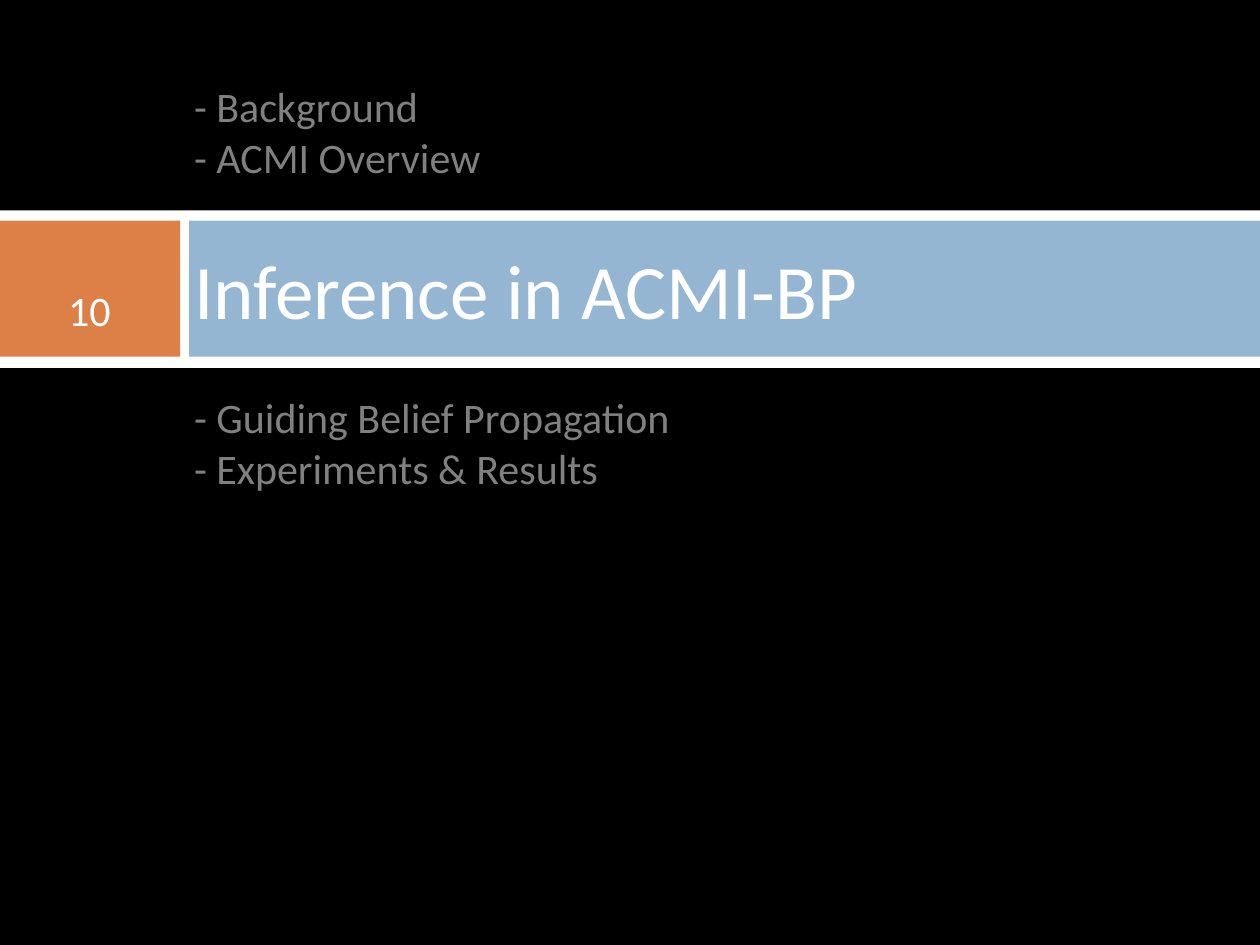
from pptx import Presentation
from pptx.dml.color import RGBColor
from pptx.enum.shapes import MSO_SHAPE
from pptx.enum.text import MSO_ANCHOR, MSO_AUTO_SIZE, PP_ALIGN
from pptx.util import Inches, Pt

RECT = MSO_SHAPE.RECTANGLE
MIDDLE, TOP = MSO_ANCHOR.MIDDLE, MSO_ANCHOR.TOP
LEFT, CENTER = PP_ALIGN.LEFT, PP_ALIGN.CENTER
NO_FIT = MSO_AUTO_SIZE.NONE

# Content
TITLE = "Inference in ACMI-BP"
NUMBER = "10"
BANDS = [  # left, top, width, height, fill
    (0, 1.67, 10.01, 1.25, "FFFFFF"),
    (0, 1.75, 1.43, 1.08, "DD8047"),
    (1.5, 1.75, 8.51, 1.08, "94B6D2"),
]
TOPICS = [  # top, width, lines
    (0.64, 2.4, ["- Background", "- ACMI Overview"]),
    (3.11, 3.96, ["- Guiding Belief Propagation", "- Experiments & Results"]),
]


def rgb(value):
    return RGBColor.from_string(value)


def place(sp, left, top, width, height):
    sp.left, sp.top = Inches(left), Inches(top)
    sp.width, sp.height = Inches(width), Inches(height)


def write(sp, lines, size, color, align=LEFT, anchor=TOP, inset=0.0, wrap=False):
    tf = sp.text_frame
    tf.text = "\n".join(lines)
    tf.word_wrap = wrap
    tf.auto_size = NO_FIT
    tf.vertical_anchor = anchor
    tf.margin_left = tf.margin_right = Inches(inset)
    tf.margin_top = tf.margin_bottom = Inches(inset)
    for p in tf.paragraphs:
        p.alignment = align
        p.font.name = "Calibri"
        p.font.size = Pt(size)
        p.font.color.rgb = rgb(color)


def main():
    prs = Presentation()
    prs.slide_width, prs.slide_height = Inches(10), Inches(7.5)
    s = prs.slides.add_slide(prs.slide_layouts[5])
    s.background.fill.solid()
    s.background.fill.fore_color.rgb = rgb("000000")

    # Bands
    for *box, fill in BANDS:
        sp = s.shapes.add_shape(RECT, *map(Inches, box))
        sp.shadow.inherit = False
        sp.fill.solid()
        sp.fill.fore_color.rgb = rgb(fill)
        sp.line.fill.background()

    # Title, brought in front of the bands
    title = s.shapes.title
    place(title, 1.5, 1.75, 8.33, 1.08)
    write(title, [TITLE], 44, "FFFFFF", anchor=MIDDLE, inset=0.04, wrap=True)
    title.element.getparent().append(title.element)

    # Slide number
    box = s.shapes.add_textbox(*map(Inches, (0.48, 2.23, 0.46, 0.46)))
    write(box, [NUMBER], 24, "FFFFFF", align=CENTER, anchor=MIDDLE)

    # Topics before and after the current one
    for top, width, lines in TOPICS:
        box = s.shapes.add_textbox(*map(Inches, (1.54, top, width, 0.83)))
        write(box, lines, 24, "808080")

    prs.save("out.pptx")


if __name__ == "__main__":
    main()
